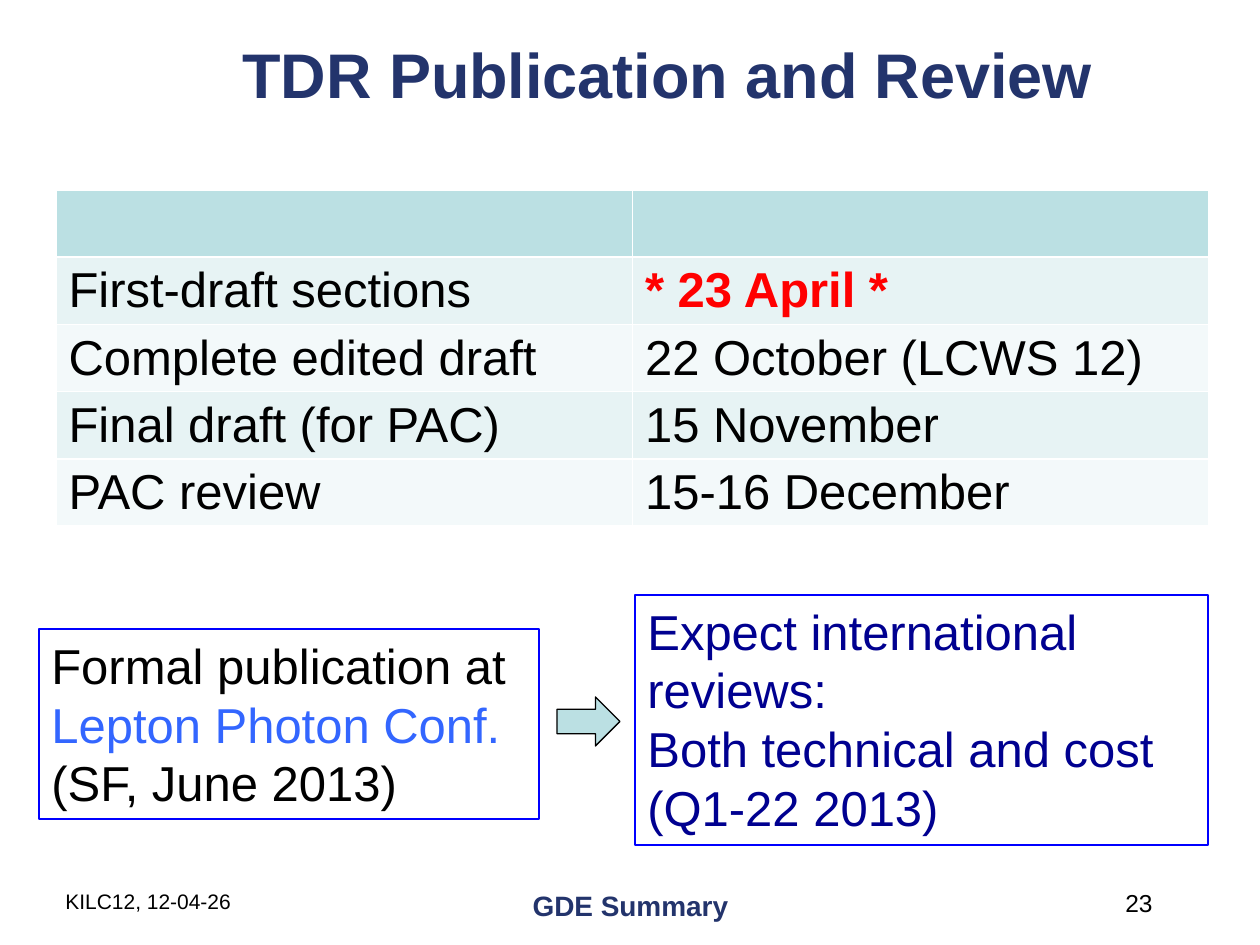
from pptx import Presentation
from pptx import util as u
from pptx.dml.color import RGBColor
from pptx.enum import shapes, text

SCALE = 914400 / 126
FONT = "Arial"
BODY = 28
NAVY = RGBColor(0x23, 0x34, 0x6C)
BLACK = RGBColor(0, 0, 0)
RED = RGBColor(0xFF, 0, 0)
BLUE = RGBColor(0, 0, 0xFF)
SKY = RGBColor(0x33, 0x66, 0xFF)
INK = RGBColor(0, 0, 0x90)
TEAL = RGBColor(0xBB, 0xE0, 0xE3)
BANDS = RGBColor(0xE7, 0xF3, 0xF4), RGBColor(0xF3, 0xF9, 0xFA)
LEFT, MID, RIGHT = text.PP_ALIGN.LEFT, text.PP_ALIGN.CENTER, text.PP_ALIGN.RIGHT

DATES = [
    ("First-draft sections", "* 23 April *"),
    ("Complete edited draft", "22 October (LCWS 12)"),
    ("Final draft (for PAC)", "15 November"),
    ("PAC review", "15-16 December"),
]


def px(*vals):
    return [u.Emu(round(v * SCALE)) for v in vals]


def style(run, size, color, bold=False):
    font = run.font
    font.name, font.size, font.bold = FONT, u.Pt(size), bold
    font.color.rgb = color


def fill_text(frame, words, size, color, bold=False, align=LEFT):
    frame.text = words
    frame.word_wrap = True
    for para in frame.paragraphs:
        para.alignment = align
        for run in para.runs:
            style(run, size, color, bold)


def add_title(slide, words, box):
    title = slide.shapes.title
    title.left, title.top, title.width, title.height = px(*box)
    fill_text(title.text_frame, words, 36, NAVY, True, MID)
    title.text_frame.vertical_anchor = text.MSO_ANCHOR.MIDDLE


def add_label(slide, words, box, size, color, bold=False, align=LEFT):
    label = slide.shapes.add_textbox(*px(*box))
    fill_text(label.text_frame, words, size, color, bold, align)
    return label


def add_frame(slide, words, box, color):
    """Outlined text box."""
    label = add_label(slide, words, box, BODY, color)
    label.line.color.rgb = BLUE
    label.line.width = u.Pt(0.75)
    return label


def add_dates(slide, box):
    rows = len(DATES) + 1
    table = slide.shapes.add_table(rows, 2, *px(*box)).table
    for cell in table.rows[0].cells:
        cell.fill.solid()
        cell.fill.fore_color.rgb = TEAL
    for r, pair in enumerate(DATES):
        for c, words in enumerate(pair):
            cell = table.cell(r + 1, c)
            cell.fill.solid()
            cell.fill.fore_color.rgb = BANDS[r % 2]
            due = r == 0 and c == 1
            fill_text(cell.text_frame, words, BODY, RED if due else BLACK, due)


def add_arrow(slide, box):
    arrow = slide.shapes.add_shape(shapes.MSO_SHAPE.RIGHT_ARROW, *px(*box))
    arrow.shadow.inherit = False
    arrow.fill.solid()
    arrow.fill.fore_color.rgb = TEAL
    arrow.line.color.rgb = BLACK
    arrow.line.width = u.Pt(0.75)


def main():
    deck = Presentation()
    deck.slide_width, deck.slide_height = px(1260, 945)
    slide = deck.slides.add_slide(deck.slide_layouts[5])

    add_title(slide, "TDR Publication and Review", (179, 10, 977, 126))
    add_dates(slide, (56, 190, 1153, 336))

    formal = add_frame(slide, "Formal publication at ", (39, 629, 500, 190), BLACK)
    para = formal.text_frame.paragraphs[0]
    for words, color in (("Lepton Photon Conf.", SKY), ("(SF, June 2013)", BLACK)):
        if color == BLACK:
            para.add_line_break()
        run = para.add_run()
        run.text = words
        style(run, BODY, color)

    add_frame(slide, "Expect international reviews:\nBoth technical and cost\n(Q1-22 2013)",
              (635, 595, 573, 250), INK)
    add_arrow(slide, (557, 697, 63, 49))

    add_label(slide, "KILC12, 12-04-26", (53, 882, 336, 63), 12, BLACK)
    add_label(slide, "GDE Summary", (431, 882, 399, 63), 16, NAVY, True, MID)
    add_label(slide, "23", (903, 882, 262, 63), 14, BLACK, align=RIGHT)
    deck.save("out.pptx")


if __name__ == "__main__":
    main()
